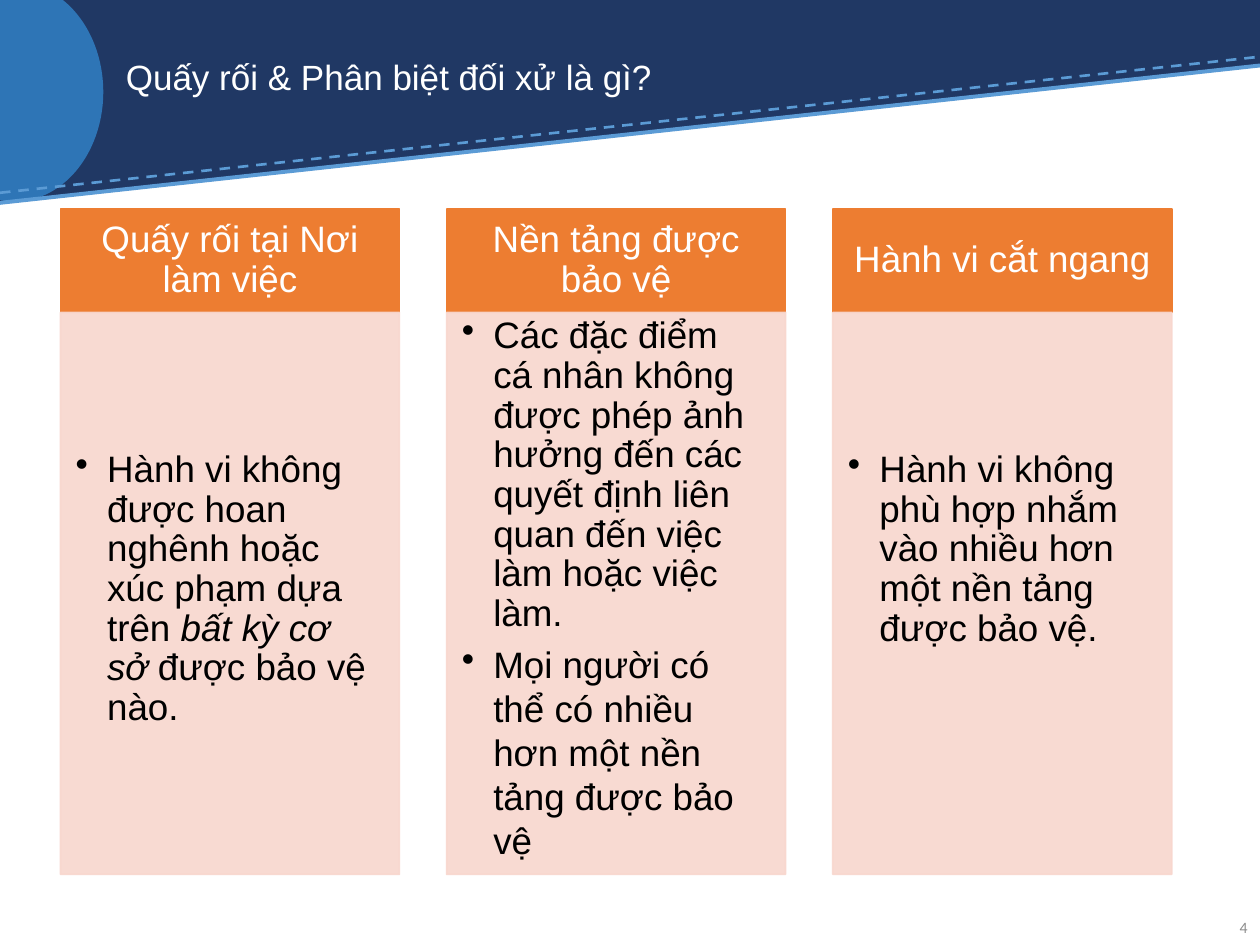
from dataclasses import dataclass

from lxml import etree
from pptx import Presentation
from pptx.dml.color import RGBColor
from pptx.enum.dml import MSO_LINE
from pptx.enum.shapes import MSO_CONNECTOR, MSO_SHAPE
from pptx.enum.text import MSO_ANCHOR, PP_ALIGN
from pptx.oxml.ns import qn
from pptx.util import Inches, Pt

RECTANGLE, TRIANGLE, OVAL = MSO_SHAPE.RECTANGLE, MSO_SHAPE.RIGHT_TRIANGLE, MSO_SHAPE.OVAL
STRAIGHT, DASH = MSO_CONNECTOR.STRAIGHT, MSO_LINE.DASH
MIDDLE = MSO_ANCHOR.MIDDLE
LEFT, CENTER, RIGHT = PP_ALIGN.LEFT, PP_ALIGN.CENTER, PP_ALIGN.RIGHT


@dataclass(frozen=True)
class Theme:
    navy: str = "203864"
    blue: str = "2E75B6"
    sky: str = "5B9BD5"
    orange: str = "ED7D31"
    peach: str = "F8D7CE"
    white: str = "FFFFFF"
    black: str = "000000"
    gray: str = "8C8C8C"
    font: str = "Arial"
    number_font: str = "Calibri"
    title_size: float = 20
    column_size: float = 21
    number_size: float = 9


THEME = Theme()

# Each column: heading, paragraphs of (line spacing, [(text, italic)]), bottom inset
COLUMNS = [
    ("Quấy rối tại Nơi làm việc",
     [(0.9, [("Hành vi không được hoan nghênh hoặc xúc phạm dựa trên ", False),
             ("bất kỳ cơ sở ", True), ("được bảo vệ nào.", False)])], 0.18),
    ("Nền tảng được bảo vệ",
     [(0.9, [("Các đặc điểm cá nhân không được phép ảnh hưởng đến các quyết định "
              "liên quan đến việc làm hoặc việc làm.", False)]),
      (1.0, [("Mọi người có thể có nhiều hơn một nền tảng được bảo vệ", False)])], 0.18),
    ("Hành vi cắt ngang",
     [(0.9, [("Hành vi không phù hợp nhắm vào nhiều hơn một nền tảng được bảo vệ.",
              False)])], 0.81),
]


def add_block(page, kind, box, color, outlined=False):
    shape = page.shapes.add_shape(kind, *map(Inches, box))
    shape.shadow.inherit = False
    shape.fill.solid()
    shape.fill.fore_color.rgb = RGBColor.from_string(color)
    if outlined:
        shape.line.color.rgb = RGBColor.from_string(color)
        shape.line.width = Pt(1)
    else:
        shape.line.fill.background()
    return shape


def add_rule(page, start, end, width, dash=None):
    line = page.shapes.add_connector(STRAIGHT, *map(Inches, (*start, *end)))
    line.line.color.rgb = RGBColor.from_string(THEME.sky)
    line.line.width = Pt(width)
    if dash:
        line.line.dash_style = dash
    etree.SubElement(line._element.spPr, qn("a:effectLst"))


def set_frame(shape, insets=(0.1, 0.05, 0.1, 0.05)):
    frame = shape.text_frame
    sides = ("margin_left", "margin_top", "margin_right", "margin_bottom")
    values = dict(zip(sides, map(Inches, insets)))
    for name, value in {"word_wrap": True, "vertical_anchor": MIDDLE, **values}.items():
        setattr(frame, name, value)
    return frame


def write(para, spans, size, color, font=THEME.font, **para_format):
    """Fill a paragraph with (text, italic) spans in one style."""
    for name, value in para_format.items():
        setattr(para, name, value)
    for text, italic in spans:
        span = para.add_run()
        span.text = text
        for name, value in {"name": font, "size": Pt(size), "italic": italic}.items():
            setattr(span.font, name, value)
        span.font.color.rgb = RGBColor.from_string(color)


def add_bullet(para):
    properties = para._p.get_or_add_pPr()
    properties.set("marL", str(Inches(0.25)))
    properties.set("indent", str(-Inches(0.25)))
    etree.SubElement(properties, qn("a:buChar"), char="•")


def set_opacity(shape, percent):
    for color in shape._element.spPr.iter(qn("a:srgbClr")):
        etree.SubElement(color, qn("a:alpha"), val=str(percent * 1000))


def add_banner(page, box):
    """Draw the slanted header with its circle and two rules."""
    left, top, width, height = box
    edge = 0.52
    add_block(page, RECTANGLE, (left, top, width, edge), THEME.navy)
    slope = add_block(page, TRIANGLE, (left, top + edge - 0.01, width, height - edge + 0.01),
                      THEME.navy)
    slope._element.spPr.find(qn("a:xfrm")).set("flipV", "1")
    add_block(page, OVAL, (left - 0.59, top - 0.14, 1.41, height + 0.14), THEME.blue)
    right = left + width
    add_rule(page, (left, top + 1.53), (right, top + 0.45), 1.5, DASH)
    add_rule(page, (left, top + 1.61), (right, top + edge), 2.25)


def add_label(page, box, text, size, color, font=THEME.font, align=LEFT):
    frame = set_frame(page.shapes.add_textbox(*map(Inches, box)))
    write(frame.paragraphs[0], [(text, False)], size, color, font,
          alignment=align, line_spacing=0.9)


def add_column(page, box, heading, paragraphs, bottom_inset):
    left, top, width, height = box
    head_height = 0.82
    head = add_block(page, RECTANGLE, (left, top, width, head_height), THEME.orange, True)
    frame = set_frame(head, (0.16, 0.09, 0.16, 0.09))
    write(frame.paragraphs[0], [(heading, False)], THEME.column_size, THEME.white,
          alignment=CENTER, line_spacing=0.9)

    body = add_block(page, RECTANGLE, (left, top + head_height, width, height - head_height),
                     THEME.peach, True)
    set_opacity(body, 90)
    frame = set_frame(body, (0.12, 0.12, 0.16, bottom_inset))
    for index, (spacing, spans) in enumerate(paragraphs):
        para = frame.add_paragraph() if index else frame.paragraphs[0]
        add_bullet(para)
        write(para, spans, THEME.column_size, THEME.black, alignment=LEFT,
              line_spacing=spacing, space_after=Pt(4))


def add_columns(page, box):
    left, top, width, height = box
    column_width = 2.69
    pitch = (width - column_width) / (len(COLUMNS) - 1)
    for index, column in enumerate(COLUMNS):
        add_column(page, (left + index * pitch, top, column_width, height), *column)


def main():
    deck = Presentation()
    deck.slide_width, deck.slide_height = Inches(10), Inches(7.5)
    page = deck.slides.add_slide(deck.slide_layouts[6])
    add_banner(page, (0, 0, 10, 1.6))
    add_label(page, (0.9, 0.2, 8.05, 0.86), "Quấy rối & Phân biệt đối xử là gì?",
              THEME.title_size, THEME.white)
    add_label(page, (9.47, 7.17, 0.53, 0.4), "4", THEME.number_size, THEME.gray,
              THEME.number_font, RIGHT)
    add_columns(page, (0.48, 1.66, 8.82, 5.28))
    deck.save("out.pptx")


if __name__ == "__main__":
    main()
